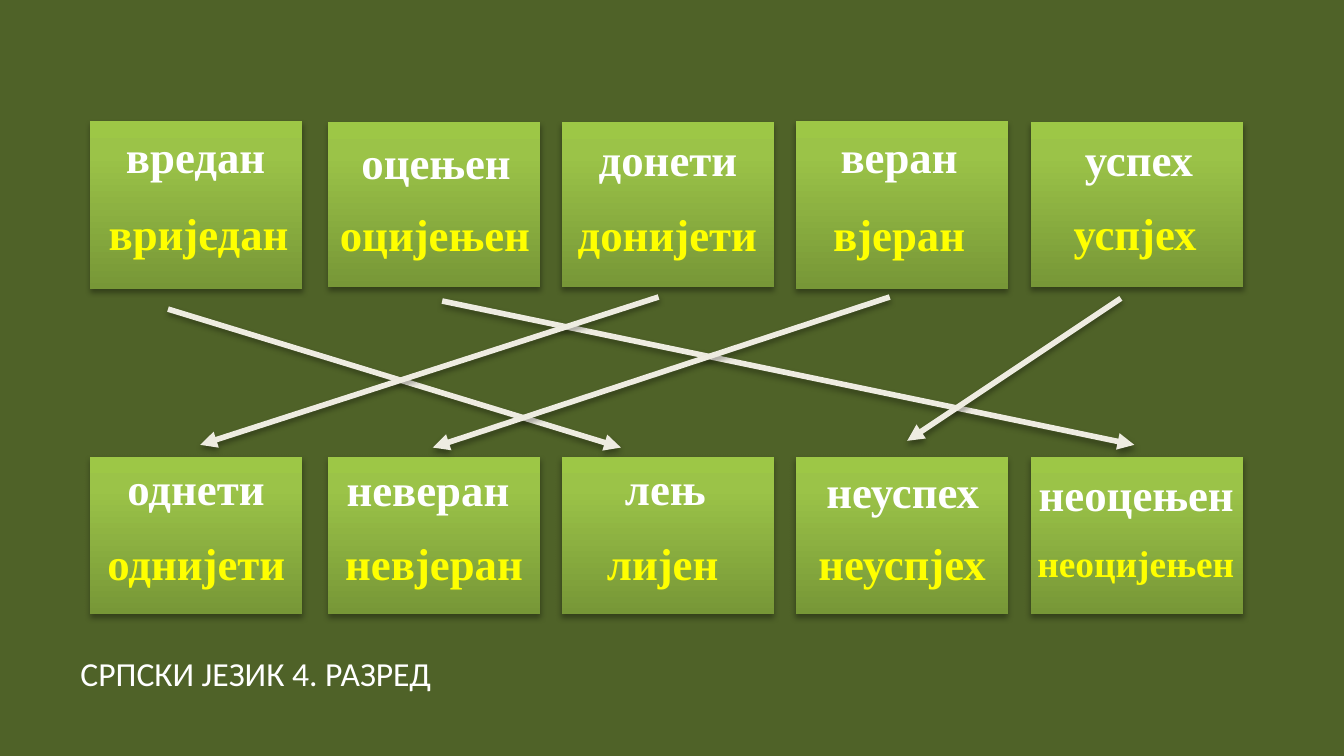
import copy
import pptx
import pptx.util
import pptx.oxml
import pptx.oxml.ns
from pptx.dml.color import RGBColor
from pptx.enum.shapes import MSO_CONNECTOR, MSO_SHAPE
from pptx.enum.text import MSO_AUTO_SIZE, PP_ALIGN
from pptx.util import Inches, Pt

BACKGROUND = RGBColor(0x4F, 0x62, 0x28)
WHITE = RGBColor(0xFF, 0xFF, 0xFF)
YELLOW = RGBColor(0xFF, 0xFF, 0x00)
CREAM = RGBColor(0xEE, 0xEC, 0xE1)
CARD_STOPS = [(0, RGBColor(0x77, 0x97, 0x37)),
              (0.8, RGBColor(0x9B, 0xC3, 0x48)),
              (1, RGBColor(0x9D, 0xC7, 0x46))]
SERIF = "Times New Roman"
LEFT, CENTER = PP_ALIGN.LEFT, PP_ALIGN.CENTER

# Cards: shared columns, then (top, height) of each card in a row
COLUMNS = [0.67, 2.44, 4.18, 5.92, 7.67]
CARD_WIDTH = 1.58
TALL, SHORT = (0.9, 1.25), (0.91, 1.23)
CARD_ROWS = [[TALL, SHORT, SHORT, TALL, SHORT], [(3.4, 1.17)] * 5]

# Words: text, left, top, width, alignment
EKAVIAN = [
    ("вредан", 0.75, 0.91, 1.41, CENTER),
    ("оцењен", 2.59, 0.95, 1.58, LEFT),
    ("донети", 4.18, 0.93, 1.58, CENTER),
    ("веран", 5.9, 0.91, 1.58, CENTER),
    ("успех", 7.66, 0.93, 1.63, CENTER),
    ("однети", 0.85, 3.38, 1.44, LEFT),
    ("неверан", 2.48, 3.39, 1.45, LEFT),
    ("лењ", 4.24, 3.38, 1.42, CENTER),
    ("неуспех", 6.05, 3.4, 1.38, LEFT),
    ("неоцењен", 7.63, 3.42, 1.69, LEFT),
]
IJEKAVIAN = [
    ("вриједан", 0.71, 1.48, 1.56, LEFT),
    ("оцијењен", 2.43, 1.49, 1.62, LEFT),
    ("донијети", 4.2, 1.49, 1.55, LEFT),
    ("вјеран", 6.1, 1.49, 1.38, LEFT),
    ("успјех", 7.72, 1.48, 1.45, CENTER),
    ("однијети", 0.7, 3.94, 1.59, LEFT),
    ("невјеран", 2.47, 3.94, 1.62, LEFT),
    ("лијен", 4.24, 3.94, 1.38, CENTER),
    ("неуспјех", 5.99, 3.94, 1.5, LEFT),
]
LONG_WORD = ("неоцијењен", 7.62, 3.97, 1.95, LEFT)
FOOTER = ("СРПСКИ ЈЕЗИК 4. РАЗРЕД", 0.5, 4.81, 4.25, LEFT)

# Arrows between opposites: start x, start y, end x, end y
ARROWS = [
    (1.25, 2.3, 4.62, 3.33),
    (3.29, 2.24, 8.44, 3.31),
    (4.9, 2.21, 1.49, 3.31),
    (6.62, 2.21, 3.22, 3.33),
    (8.34, 2.22, 6.75, 3.28),
]

SHADOW = """<a:effectLst %s><a:outerShdw blurRad="40000" dist="23000" dir="5400000"
 rotWithShape="0"><a:srgbClr val="000000"><a:alpha val="35000"/></a:srgbClr>
 </a:outerShdw></a:effectLst>""" % pptx.oxml.ns.nsdecls("a")
ARROWHEAD = '<a:tailEnd %s type="triangle"/>' % pptx.oxml.ns.nsdecls("a")


def add_shadow(sp):
    sp._element.spPr.append(pptx.oxml.parse_xml(SHADOW))


def add_card(s, left, top, height):
    sp = s.shapes.add_shape(MSO_SHAPE.RECTANGLE, Inches(left), Inches(top),
                            Inches(CARD_WIDTH), Inches(height))
    sp.line.fill.background()
    sp.fill.gradient()
    sp.fill.gradient_angle = 90
    stop_list = sp._element.spPr.find(".//" + pptx.oxml.ns.qn("a:gsLst"))
    stop_list.append(copy.deepcopy(stop_list[-1]))
    for stop, (position, color) in zip(sp.fill.gradient_stops, CARD_STOPS):
        stop.position = position
        stop.color.rgb = color
    add_shadow(sp)


def add_text(s, item, color, size=24, font=SERIF, bold=True):
    text, left, top, width, align = item
    height = {24: 0.5, 20: 0.44, 18: 0.4}[size]
    tf = s.shapes.add_textbox(Inches(left), Inches(top),
                              Inches(width), Inches(height)).text_frame
    tf.word_wrap = True
    tf.auto_size = MSO_AUTO_SIZE.SHAPE_TO_FIT_TEXT
    p = tf.paragraphs[0]
    p.text = text
    p.alignment = align
    p.font.name = font
    p.font.size = Pt(size)
    p.font.bold = bold
    p.font.color.rgb = color


def add_arrow(s, points):
    arrow = s.shapes.add_connector(MSO_CONNECTOR.STRAIGHT, *map(Inches, points))
    arrow.line.color.rgb = CREAM
    arrow.line.width = Pt(3)
    ln = arrow._element.spPr.find(pptx.oxml.ns.qn("a:ln"))
    ln.append(pptx.oxml.parse_xml(ARROWHEAD))
    add_shadow(arrow)


def main():
    prs = pptx.Presentation()
    # Widescreen, 16:9
    prs.slide_width = Inches(10)
    prs.slide_height = int(prs.slide_width * 9 / 16)
    s = prs.slides.add_slide(prs.slide_layouts[6])
    s.background.fill.solid()
    s.background.fill.fore_color.rgb = BACKGROUND

    # Cards
    for row in CARD_ROWS:
        for left, (top, height) in zip(COLUMNS, row):
            add_card(s, left, top, height)

    # Words
    for words, color in ((EKAVIAN, WHITE), (IJEKAVIAN, YELLOW)):
        for word in words:
            add_text(s, word, color)
    add_text(s, LONG_WORD, YELLOW, size=20)

    # Arrows
    for points in ARROWS:
        add_arrow(s, points)

    # Footer
    add_text(s, FOOTER, WHITE, size=18, font="Calibri", bold=False)
    prs.save("out.pptx")


if __name__ == "__main__":
    main()
